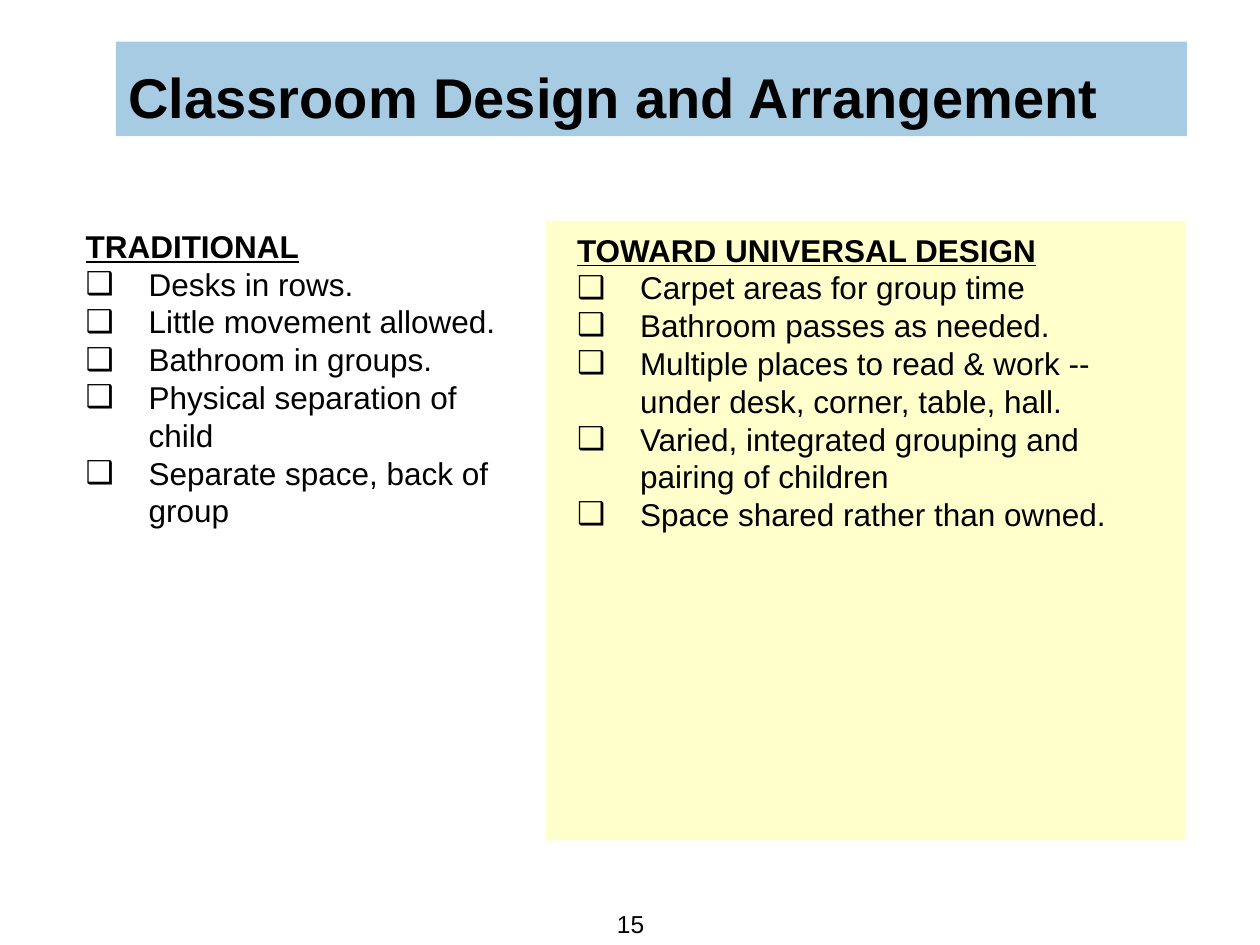
from lxml.etree import SubElement
from pptx import Presentation
from pptx.dml.color import RGBColor
from pptx.enum.shapes import MSO_SHAPE
from pptx.enum.text import MSO_ANCHOR, MSO_AUTO_SIZE, PP_ALIGN
from pptx.oxml.ns import qn
from pptx.util import Inches, Pt

BLACK = RGBColor(0x00, 0x00, 0x00)
BLUE = RGBColor(0xA8, 0xCB, 0xE4)
YELLOW = RGBColor(0xFF, 0xFF, 0xCC)

TRADITIONAL = [
    "Desks in rows.",
    "Little movement allowed.",
    "Bathroom in groups.",
    "Physical separation of child",
    "Separate space, back of group",
]
UNIVERSAL = [
    "Carpet areas for group time",
    "Bathroom passes as needed.",
    "Multiple places to read & work -- under desk, corner, table, hall.",
    "Varied, integrated grouping and pairing of children",
    "Space shared rather than owned.",
]


def set_attrs(obj, **values):
    for name, value in values.items():
        setattr(obj, name, value)


def place(sp, left, top, width, height):
    set_attrs(sp, left=Inches(left), top=Inches(top),
              width=Inches(width), height=Inches(height))


def set_frame(tf, inset, anchor, wrap=True):
    margins = ("margin_left", "margin_top", "margin_right", "margin_bottom")
    set_attrs(tf, auto_size=MSO_AUTO_SIZE.NONE, word_wrap=wrap,
              vertical_anchor=anchor, **dict.fromkeys(margins, Inches(inset)))


def set_font(font, size, bold=False, underline=False):
    set_attrs(font, name="Arial", size=Pt(size), bold=bold, underline=underline)
    font.color.rgb = BLACK


def set_bullet(p, char):
    pPr = p._p.get_or_add_pPr()
    pPr.set("marL", str(Inches(0.5)))
    pPr.set("indent", str(Inches(-0.5)))
    if char:
        color = SubElement(pPr, qn("a:buClr"))
        SubElement(color, qn("a:srgbClr"), val=str(BLACK))
        SubElement(pPr, qn("a:buFont"), typeface="Arial")
        SubElement(pPr, qn("a:buChar"), char=char)
    else:
        SubElement(pPr, qn("a:buNone"))


def add_panel(s, behind, color, left, top, width, height):
    sp = s.shapes.add_shape(MSO_SHAPE.RECTANGLE, Inches(left), Inches(top),
                            Inches(width), Inches(height))
    sp.shadow.inherit = False
    sp.fill.solid()
    sp.fill.fore_color.rgb = color
    sp.line.fill.background()
    behind.element.addprevious(sp.element)


def add_title(s, text, left, top, width, height):
    sp = s.shapes.title
    add_panel(s, sp, BLUE, left, top, width, height)
    place(sp, left + 0.05, top, width - 0.1, height)
    tf = sp.text_frame
    set_frame(tf, 0.05, MSO_ANCHOR.BOTTOM)
    tf.text = text
    p = tf.paragraphs[0]
    p.alignment = PP_ALIGN.LEFT
    set_font(p.runs[0].font, 32, bold=True)


def fill_list(sp, heading, items, inset, left, top, width, height):
    place(sp, left, top, width, height)
    tf = sp.text_frame
    set_frame(tf, inset, MSO_ANCHOR.TOP)
    tf.text = "\n".join([heading, *items])
    for i, p in enumerate(tf.paragraphs):
        is_heading = i == 0
        set_bullet(p, None if is_heading else "❑")
        set_attrs(p, alignment=PP_ALIGN.LEFT, line_spacing=Pt(21.6),
                  space_before=Pt(0), space_after=Pt(0))
        set_font(p.runs[0].font, 18, bold=is_heading, underline=is_heading)


def add_page_number(s, number, left, top, width, height):
    sp = s.shapes.add_textbox(Inches(left), Inches(top), Inches(width), Inches(height))
    tf = sp.text_frame
    set_frame(tf, 0.05, MSO_ANCHOR.BOTTOM, wrap=False)
    tf.text = number
    p = tf.paragraphs[0]
    p.alignment = PP_ALIGN.CENTER
    set_font(p.runs[0].font, 14)


def main():
    prs = Presentation()
    set_attrs(prs, slide_width=Inches(10), slide_height=Inches(7.5))
    s = prs.slides.add_slide(prs.slide_layouts[3])
    traditional, universal = s.placeholders[1], s.placeholders[2]
    add_title(s, "Classroom Design and Arrangement", 0.92, 0.33, 8.5, 0.75)
    fill_list(traditional, "TRADITIONAL", TRADITIONAL, 0.05, 0.63, 1.75, 3.48, 2.72)
    add_panel(s, universal, YELLOW, 4.33, 1.75, 5.08, 4.92)
    fill_list(universal, "TOWARD UNIVERSAL DESIGN", UNIVERSAL, 0, 4.58, 1.83, 4.65, 2.62)
    add_page_number(s, "15", 4.84, 7.16, 0.33, 0.34)
    prs.save("out.pptx")


if __name__ == "__main__":
    main()
